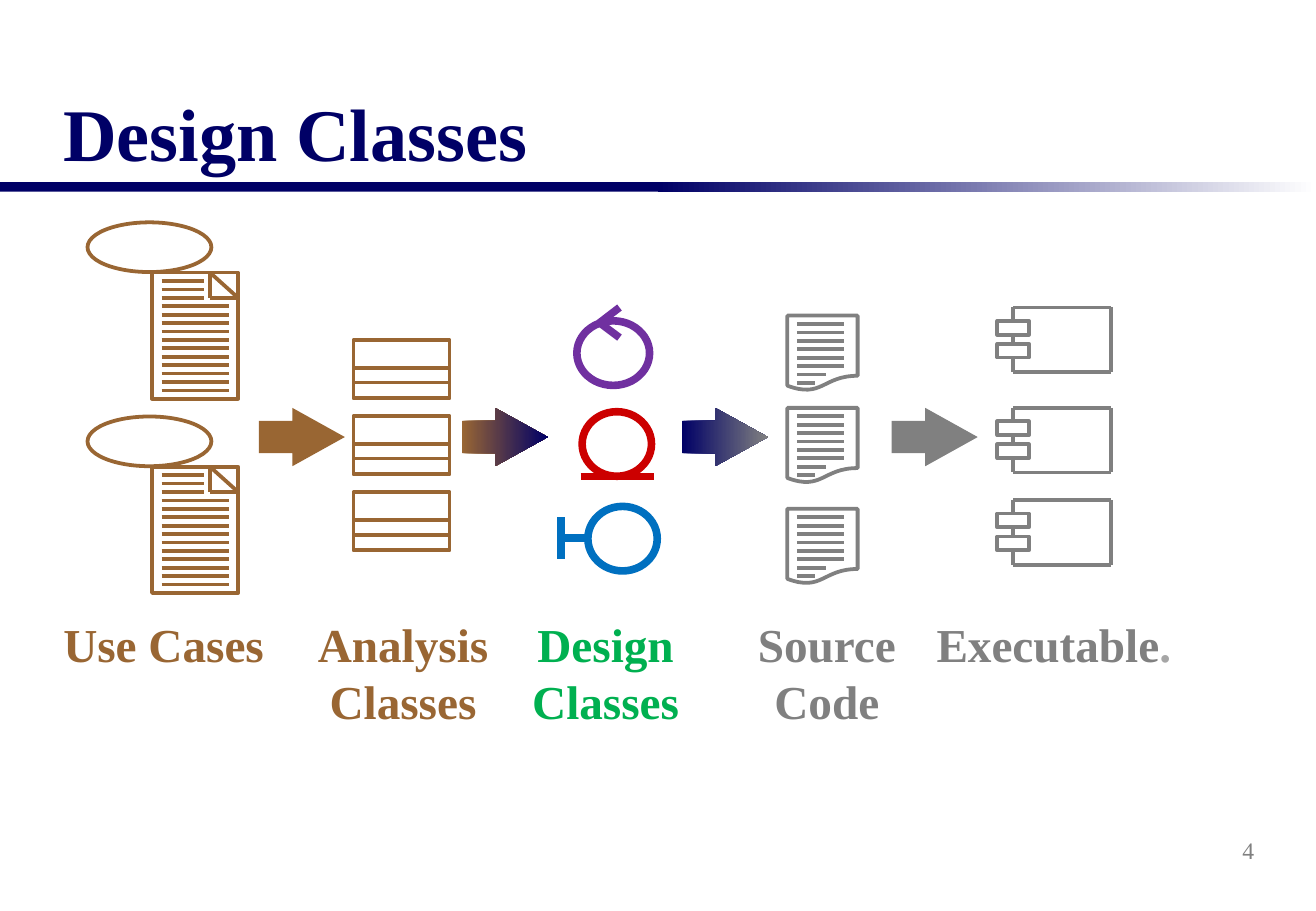
from dataclasses import dataclass

from lxml.etree import SubElement
from pptx import Presentation
from pptx.dml.color import RGBColor as Rgb
from pptx.dml.fill import FillFormat
from pptx.enum.shapes import MSO_CONNECTOR as Connector, MSO_SHAPE as Kind
from pptx.enum.text import MSO_ANCHOR as Anchor, MSO_AUTO_SIZE as AutoSize, PP_ALIGN as Align
from pptx.oxml.ns import qn
from pptx.shapes.autoshape import Shape
from pptx.slide import Slide
from pptx.text.text import TextFrame
from pptx.util import Cm, Pt


@dataclass(frozen=True)
class Theme:
    font: str = "Times New Roman"
    navy: str = "000066"
    white: str = "FFFFFF"
    brown: str = "996633"
    grey: str = "808080"
    pale_grey: str = "A6A6A6"
    green: str = "00B050"
    purple: str = "7030A0"
    red: str = "CC0000"
    blue: str = "0070C0"
    title_size: float = 44
    label_size: float = 28
    number_size: float = 14
    thin: float = 2.25
    thick: float = 4.5


@dataclass(frozen=True)
class Box:
    left: float
    top: float
    width: float
    height: float


@dataclass(frozen=True)
class Span:
    text: str
    color: str
    size: float
    bold: bool = True


@dataclass(frozen=True)
class Label:
    left: float
    width: float
    lines: tuple[tuple[Span, ...], ...]


@dataclass(frozen=True)
class Arrow:
    left: float
    start: str
    end: str


@dataclass(frozen=True)
class Stereotype:
    color: str
    circle: Box
    strokes: tuple[tuple[float, float, float, float], ...]


THEME = Theme()
TEXT_STEP = 0.176


def label_span(text: str, color: str) -> Span:
    return Span(text, color, THEME.label_size)


LABELS = (
    Label(1.07, 4.7, ((label_span("Use Cases", THEME.brown),),)),
    Label(6.38, 4.09, ((label_span("Analysis", THEME.brown),), (label_span("Classes", THEME.brown),))),
    Label(10.87, 3.58, ((label_span("Design", THEME.green),), (label_span("Classes", THEME.green),))),
    Label(15.57, 3.43, ((label_span("Source", THEME.grey),), (label_span("Code", THEME.grey),))),
    Label(19.3, 5.46, ((label_span("Executable", THEME.grey), label_span(".", THEME.pale_grey)),)),
)
ARROWS = (
    Arrow(5.41, THEME.brown, THEME.brown),
    Arrow(9.65, THEME.brown, THEME.navy),
    Arrow(14.25, THEME.navy, THEME.grey),
    Arrow(18.64, THEME.grey, THEME.grey),
)
STEREOTYPES = (
    Stereotype(THEME.purple, Box(12.06, 6.71, 1.52, 1.35),
               ((12.52, 6.76, 12.95, 6.43), (12.95, 7.06, 12.55, 6.76))),
    Stereotype(THEME.red, Box(12.17, 8.61, 1.45, 1.35), ((12.14, 9.96, 13.67, 9.96),)),
    Stereotype(THEME.blue, Box(12.29, 10.59, 1.45, 1.35),
               ((11.73, 10.82, 11.73, 11.68), (12.29, 11.25, 11.73, 11.25))),
)


def paint(fill: FillFormat, start: str, end: str) -> None:
    if start == end:
        fill.solid()
        fill.fore_color.rgb = Rgb.from_string(start)
        return
    fill.gradient()
    fill.gradient_angle = 0
    for stop, color in zip(fill.gradient_stops, (start, end)):
        stop.color.rgb = Rgb.from_string(color)


def add_solid(page: Slide, kind: Kind, box: Box, start: str, end: str) -> Shape:
    shape = page.shapes.add_shape(kind, Cm(box.left), Cm(box.top), Cm(box.width), Cm(box.height))
    shape.shadow.inherit = False
    shape.line.fill.background()
    paint(shape.fill, start, end)
    return shape


def add_outline(page: Slide, kind: Kind, box: Box, color: str, weight: float = THEME.thin) -> None:
    shape = add_solid(page, kind, box, color, color)
    shape.fill.background()
    shape.line.color.rgb = Rgb.from_string(color)
    shape.line.width = Pt(weight)


def add_line(page: Slide, x1: float, y1: float, x2: float, y2: float,
             color: str, weight: float = THEME.thin) -> None:
    line = page.shapes.add_connector(Connector.STRAIGHT, Cm(x1), Cm(y1), Cm(x2), Cm(y2))
    line.line.color.rgb = Rgb.from_string(color)
    line.line.width = Pt(weight)
    SubElement(line._element.spPr, qn("a:effectLst"))


def write(frame: TextFrame, lines: tuple[tuple[Span, ...], ...], align: Align) -> None:
    for index, spans in enumerate(lines):
        para = frame.add_paragraph() if index else frame.paragraphs[0]
        para.alignment = align
        for span in spans:
            run = para.add_run()
            run.text = span.text
            run.font.name = THEME.font
            run.font.size = Pt(span.size)
            run.font.bold = span.bold
            run.font.color.rgb = Rgb.from_string(span.color)


def add_text(page: Slide, box: Box, lines: tuple[tuple[Span, ...], ...], align: Align,
             anchor: Anchor = Anchor.TOP) -> None:
    frame = page.shapes.add_textbox(Cm(box.left), Cm(box.top), Cm(box.width), Cm(box.height)).text_frame
    frame.word_wrap = False
    frame.vertical_anchor = anchor
    write(frame, lines, align)


def add_title(page: Slide, text: str) -> None:
    title = page.shapes.title
    title.left, title.top, title.width, title.height = Cm(1.07), Cm(0.84), Cm(25.4), Cm(2.97)
    title.text_frame.auto_size = AutoSize.NONE
    title.text_frame.vertical_anchor = Anchor.BOTTOM
    write(title.text_frame, ((Span(text, THEME.navy, THEME.title_size),),), Align.LEFT)


def add_text_lines(page: Slide, left: float, top: float, rights: list[float], color: str) -> None:
    for row, right in enumerate(rights, start=1):
        y = top + row * TEXT_STEP
        add_line(page, left, y, right, y, color)


def add_use_case(page: Slide, top: float) -> None:
    sheet = top + 1.05
    fold = sheet + 0.53
    add_outline(page, Kind.OVAL, Box(1.83, top, 2.59, 1.04), THEME.brown)
    add_outline(page, Kind.RECTANGLE, Box(3.18, sheet, 1.8, 15 * TEXT_STEP), THEME.brown)
    add_line(page, 4.39, sheet, 4.98, fold, THEME.brown)
    add_line(page, 4.39, sheet, 4.39, fold, THEME.brown)
    add_line(page, 4.98, fold, 4.39, fold, THEME.brown)
    add_text_lines(page, 3.38, sheet, [4.27] * 3 + [4.78] * 11, THEME.brown)


def add_analysis_class(page: Slide, top: float) -> None:
    add_outline(page, Kind.RECTANGLE, Box(7.39, top, 2.01, 1.22), THEME.brown)
    for offset in (0.58, 0.89):
        add_line(page, 7.39, top + offset, 9.4, top + offset, THEME.brown)


def add_source_file(page: Slide, top: float) -> None:
    add_outline(page, Kind.FLOWCHART_DOCUMENT, Box(16.46, top, 1.47, 1.57), THEME.grey)
    add_text_lines(page, 16.66, top, [17.65] * 6 + [17.27, 17.04], THEME.grey)


def add_component(page: Slide, top: float) -> None:
    left, right, bottom = 21.18, 23.22, top + 1.35
    add_line(page, right, top, right, bottom, THEME.grey)
    for y in (top, bottom):
        add_line(page, right, y, left, y, THEME.grey)
    for start, end in ((0, 0.28), (0.57, 0.76), (1.05, 1.35)):
        add_line(page, left, top + start, left, top + end, THEME.grey)
    for offset in (0.28, 0.76):
        add_outline(page, Kind.RECTANGLE, Box(20.85, top + offset, 0.66, 0.29), THEME.grey)


def main() -> None:
    deck = Presentation()
    deck.slide_width, deck.slide_height = Cm(27.51), Cm(19.05)
    page = deck.slides.add_slide(deck.slide_layouts[5])
    add_solid(page, Kind.RECTANGLE, Box(0, 3.81, 13.76, 0.2), THEME.navy, THEME.navy)
    add_solid(page, Kind.RECTANGLE, Box(13.75, 3.81, 13.76, 0.2), THEME.navy, THEME.white)
    add_title(page, "Design Classes")
    number = Span("4", THEME.grey, THEME.number_size, bold=False)
    add_text(page, Box(20.73, 17.14, 5.74, 1.27), ((number,),), Align.RIGHT, Anchor.MIDDLE)
    for label in LABELS:
        height = 0.28 + 1.17 * len(label.lines)
        add_text(page, Box(label.left, 12.75, label.width, height), label.lines, Align.CENTER)
    for arrow in ARROWS:
        shape = add_solid(page, Kind.RIGHT_ARROW, Box(arrow.left, 8.53, 1.8, 1.22), arrow.start, arrow.end)
        shape.adjustments[0], shape.adjustments[1] = 0.55, 0.9
    for draw, tops in (
        (add_use_case, (4.65, 8.71)),
        (add_analysis_class, (7.11, 8.7, 10.29)),
        (add_source_file, (6.6, 8.53, 10.64)),
        (add_component, (6.43, 8.53, 10.46)),
    ):
        for top in tops:
            draw(page, top)
    for item in STEREOTYPES:
        for stroke in item.strokes:
            add_line(page, *stroke, item.color, THEME.thick)
        add_outline(page, Kind.OVAL, item.circle, item.color, THEME.thick)
    deck.save("out.pptx")


if __name__ == "__main__":
    main()
